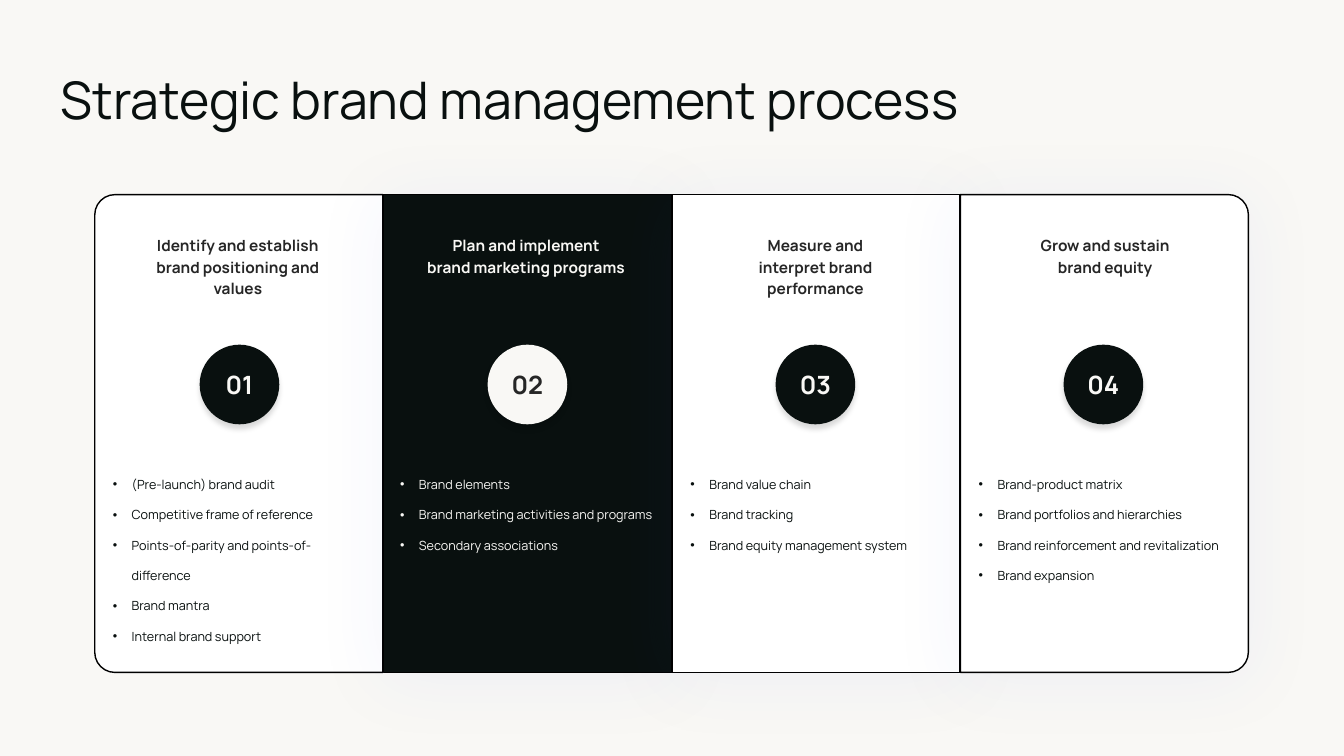
from copy import deepcopy

from lxml.etree import SubElement
from pptx import Presentation
from pptx.dml.color import RGBColor
from pptx.enum.shapes import MSO_SHAPE as Shape
from pptx.enum.text import MSO_ANCHOR as Anchor, MSO_AUTO_SIZE as Fit, PP_ALIGN as Align
from pptx.oxml.ns import qn
from pptx.util import Pt

INK = RGBColor(0x09, 0x10, 0x0F)
CREAM = RGBColor(0xF9, 0xF8, 0xF5)
WHITE = RGBColor(0xFF, 0xFF, 0xFF)
BLACK = RGBColor(0, 0, 0)
GRAY = RGBColor(0x26, 0x26, 0x26)
BLUE = RGBColor(0x35, 0x53, 0xD3)

# Panel grid
LEFT, TOP, WIDE, HIGH, STEP = 67.7, 139, 205.7, 341.3, 206.1
GLOW = (BLUE, 5, 52, 4)
DROP = (BLACK, 15, 4, 3)


class Deck:
    """Holds the text style and the current slide."""

    face = "Manrope"

    def __init__(self):
        self.show = Presentation()
        self.show.slide_width, self.show.slide_height = Pt(960), Pt(540)
        self.slide = self.show.slides.add_slide(self.show.slide_layouts[6])
        fill = self.slide.background.fill
        fill.solid()
        fill.fore_color.rgb = CREAM

    def shape(self, kind, box, fill, adj, line=None, shade=None):
        item = self.slide.shapes.add_shape(kind, *map(Pt, box))
        item.fill.solid()
        item.fill.fore_color.rgb = fill
        for index, value in enumerate(adj):
            item.adjustments[index] = value
        if line is None:
            item.line.fill.background()
        else:
            item.line.color.rgb = line
            item.line.width = Pt(1)
        item.shadow.inherit = False
        if shade:
            self.shade(item, *shade)
        return item

    def shade(self, item, color, alpha, blur, dist):
        effects = item._element.spPr.find(qn("a:effectLst"))
        outer = SubElement(effects, qn("a:outerShdw"), blurRad=str(Pt(blur)),
                           dist=str(Pt(dist)), dir="5400000", algn="t", rotWithShape="0")
        tint = SubElement(outer, qn("a:srgbClr"), val=str(color))
        SubElement(tint, qn("a:alpha"), val=str(alpha * 1000))

    def panel(self, x, fill, turn, adj, shade):
        """A column; a turned one is laid on its side and rotated about its centre."""
        if turn:
            shift = (HIGH - WIDE) / 2
            box = (x - shift, TOP + shift, HIGH, WIDE)
            kind = Shape.ROUND_2_SAME_RECTANGLE
        else:
            box, kind = (x, TOP, WIDE, HIGH), Shape.ROUNDED_RECTANGLE
        self.shape(kind, box, fill, adj, BLACK, shade).rotation = turn

    def put(self, para, text, size, color, bold=False, **form):
        for name, value in form.items():
            setattr(para, name, value)
        for index, part in enumerate(text.split("\n")):
            if index:
                para.add_line_break()
            run = para.add_run()
            run.text = part
            style = {"name": self.face, "size": Pt(size), "bold": bold}
            for name, value in style.items():
                setattr(run.font, name, value)
            run.font.color.rgb = color
        # Line breaks take the style of the text around them
        for gap in para._p.findall(qn("a:br")):
            gap.append(deepcopy(run._r.rPr))

    def frame(self, box, inset=(0, 0), fit=Fit.SHAPE_TO_FIT_TEXT):
        frame = self.slide.shapes.add_textbox(*map(Pt, box)).text_frame
        self.pad(frame, inset)
        frame.auto_size = fit
        return frame

    def pad(self, frame, inset):
        frame.word_wrap = True
        frame.margin_left = frame.margin_right = Pt(inset[0])
        frame.margin_top = frame.margin_bottom = Pt(inset[1])

    def title(self, text):
        frame = self.frame((43.2, 48.2, 848.9, 49), fit=Fit.NONE)
        self.put(frame.paragraphs[0], text, 37, INK, space_after=Pt(13))

    def head(self, x, width, rows, text, color):
        frame = self.frame((x, 163.4, width, 5.6 + 15.1 * rows), (7.2, 3.6))
        self.put(frame.paragraphs[0], text, 11, color, True,
                 alignment=Align.CENTER, line_spacing=1.15)

    def badge(self, x, text, fill, color):
        item = self.shape(Shape.ROUNDED_RECTANGLE, (x, 246.2, 56.9, 56.9),
                          fill, [0.5], shade=DROP)
        frame = item.text_frame
        self.pad(frame, (7.2, 3.6))
        frame.vertical_anchor = Anchor.MIDDLE
        self.put(frame.paragraphs[0], text, 18, color, True, alignment=Align.CENTER)

    def bullets(self, x, lines, color):
        frame = self.frame((x, 329.8, 182.2, 22 * len(lines)))
        for index, line in enumerate(lines):
            para = frame.add_paragraph() if index else frame.paragraphs[0]
            props = para._p.get_or_add_pPr()
            props.set("marL", str(Pt(13.5)))
            props.set("indent", str(Pt(-13.5)))
            tint = SubElement(props, qn("a:buClr"))
            SubElement(tint, qn("a:srgbClr"), val=str(color))
            SubElement(props, qn("a:buFont"), typeface="Arial")
            SubElement(props, qn("a:buChar"), char="•")
            self.put(para, line, 9, color, line_spacing=2.0)


# Panel turn, corners, shadow; heading left, width, rows, text; list left, lines
STAGES = [
    (270, [0.07, 0], None,
     89.3, 161.3, 3, "Identify and establish brand positioning and values",
     80.6, ["(Pre-launch) brand audit", "Competitive frame of reference",
            "Points-of-parity and points-of-difference", "Brand mantra",
            "Internal brand support"]),
    (0, [0], GLOW,
     290.9, 169.9, 2, "Plan and implement\nbrand marketing programs",
     285.8, ["Brand elements", "Brand marketing activities and programs",
             "Secondary associations"]),
    (0, [0], GLOW,
     509.8, 145.4, 3, "Measure and\ninterpret brand\nperformance",
     493.2, ["Brand value chain", "Brand tracking", "Brand equity management system"]),
    (90, [0.07, 0], GLOW,
     729.4, 120.2, 2, "Grow and sustain brand equity",
     699.1, ["Brand-product matrix", "Brand portfolios and hierarchies",
             "Brand reinforcement and revitalization", "Brand expansion"]),
]
DARK = 1  # index of the dark panel


def main():
    deck = Deck()

    # Panels lie behind all the text
    for i, (turn, adj, shade, *_) in enumerate(STAGES):
        deck.panel(LEFT + i * STEP, INK if i == DARK else WHITE, turn, adj, shade)

    # Heading, list and number of each stage
    for i, (*_, side, width, rows, head, edge, lines) in enumerate(STAGES):
        dark = i == DARK
        deck.head(side, width, rows, head, CREAM if dark else GRAY)
        deck.bullets(edge, lines, CREAM if dark else INK)
        deck.badge(142.6 + i * 205.7, f"{i + 1:02}",
                   CREAM if dark else INK, GRAY if dark else CREAM)

    deck.title("Strategic brand management process")
    deck.show.save("out.pptx")


if __name__ == "__main__":
    main()
